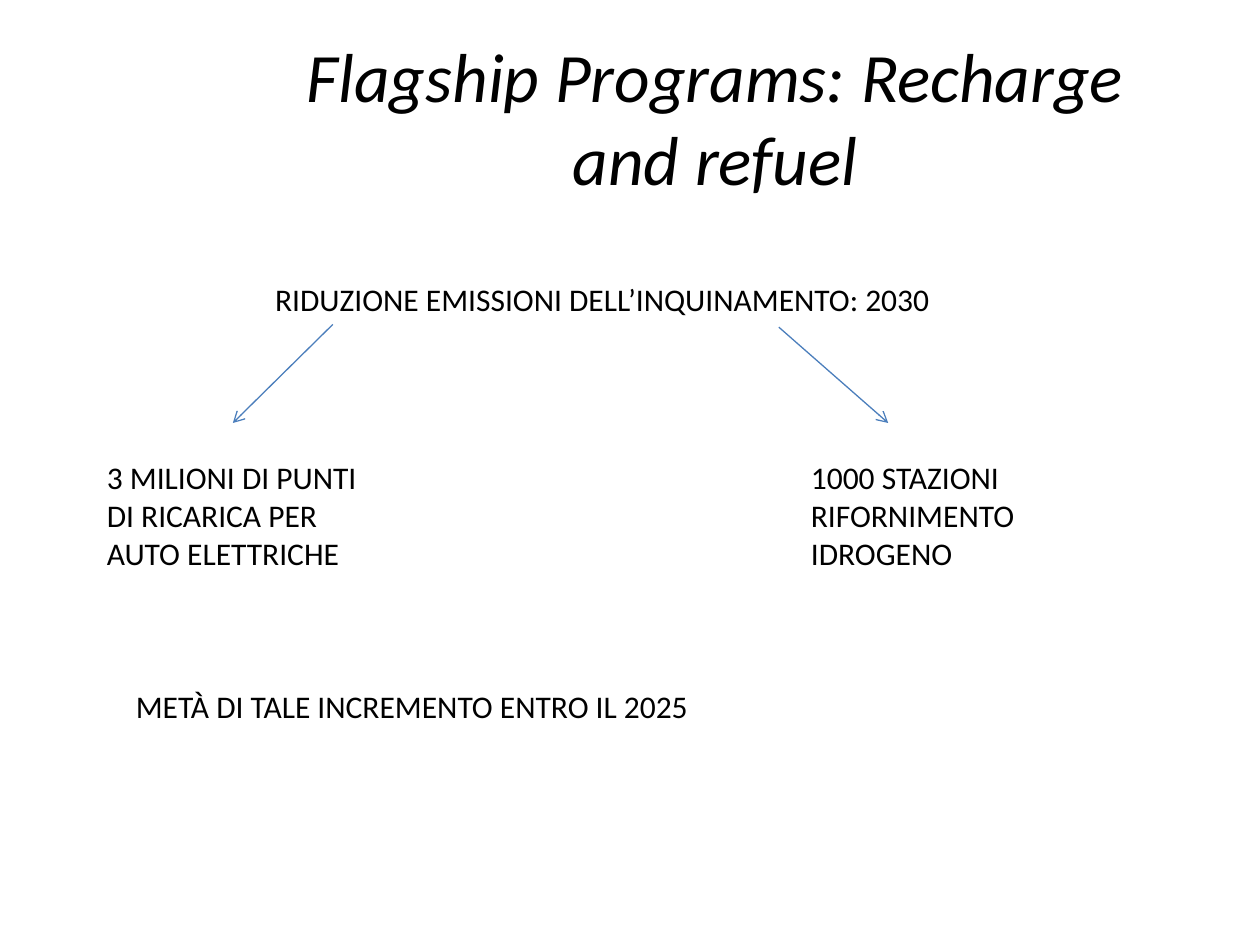
from lxml import etree
from pptx import Presentation
from pptx import util as u
from pptx.dml.color import RGBColor
from pptx.enum import shapes, text
from pptx.oxml import ns

BLACK = RGBColor(0x00, 0x00, 0x00)
BLUE = RGBColor(0x4B, 0x7E, 0xBC)
WIDE, HIGH = 10, 7.5


def write(slide, box, words, size=18, italic=False, wrap=False,
          align=text.PP_ALIGN.LEFT, anchor=text.MSO_ANCHOR.TOP):
    """Place text in a box, one paragraph per line."""
    frame = slide.shapes.add_textbox(*map(u.Inches, box)).text_frame
    frame.word_wrap = wrap
    frame.auto_size = (text.MSO_AUTO_SIZE.NONE if wrap
                       else text.MSO_AUTO_SIZE.SHAPE_TO_FIT_TEXT)
    frame.vertical_anchor = anchor
    frame.text = words
    for para in frame.paragraphs:
        para.alignment = align
        for run in para.runs:
            font = run.font
            font.name, font.size, font.italic = "Calibri", u.Pt(size), italic
            font.color.rgb = BLACK


def arrow(slide, start, end):
    """Draw a thin line with an open head at its end."""
    line = slide.shapes.add_connector(
        shapes.MSO_CONNECTOR.STRAIGHT, *map(u.Inches, start + end))
    line.line.color.rgb = BLUE
    line.line.width = u.Pt(0.75)
    etree.SubElement(line.line._get_or_add_ln(), ns.qn("a:tailEnd"), type="arrow")
    etree.SubElement(line._element.spPr, ns.qn("a:effectLst"))


def title(slide, box):
    """Fill the box with the centred slide title."""
    write(slide, box, "Flagship Programs: Recharge and refuel", size=39.6,
          italic=True, wrap=True, align=text.PP_ALIGN.CENTER,
          anchor=text.MSO_ANCHOR.MIDDLE)


def tree(slide, box):
    """Set a goal at the top of the box and its two branches below."""
    left, top, width, height = box
    write(slide, (left + 0.18 * width, top, 0.73 * width, 0.4),
          "RIDUZIONE EMISSIONI DELL’INQUINAMENTO: 2030")
    branches = (
        (0, 0.3, "3 MILIONI DI PUNTI\nDI RICARICA PER\nAUTO ELETTRICHE",
         (0.255, 0.165), (0.148, 0.488)),
        (0.753, 0.247, "1000 STAZIONI\nRIFORNIMENTO\nIDROGENO",
         (0.732, 0.174), (0.849, 0.488)),
    )
    for col, span, words, *ends in branches:
        arrow(slide, *((left + x * width, top + y * height) for x, y in ends))
        write(slide, (left + col * width, top + height - 1.01,
                      span * width, 1.01), words)


def target(slide, box):
    """State the halfway target in the box."""
    write(slide, box, "METÀ DI TALE INCREMENTO ENTRO IL 2025")


def main():
    """Build and save the slide."""
    deck = Presentation()
    deck.slide_width, deck.slide_height = u.Inches(WIDE), u.Inches(HIGH)
    slide = deck.slides.add_slide(deck.slide_layouts[6])
    title(slide, (0.185 * WIDE, 0.04 * HIGH, 0.765 * WIDE, HIGH / 6))
    tree(slide, (0.075 * WIDE, 0.29 * HIGH, 0.742 * WIDE, 0.323 * HIGH))
    target(slide, (0.098 * WIDE, 0.72 * HIGH, 0.463 * WIDE, 0.4))
    deck.save("out.pptx")


if __name__ == "__main__":
    main()
